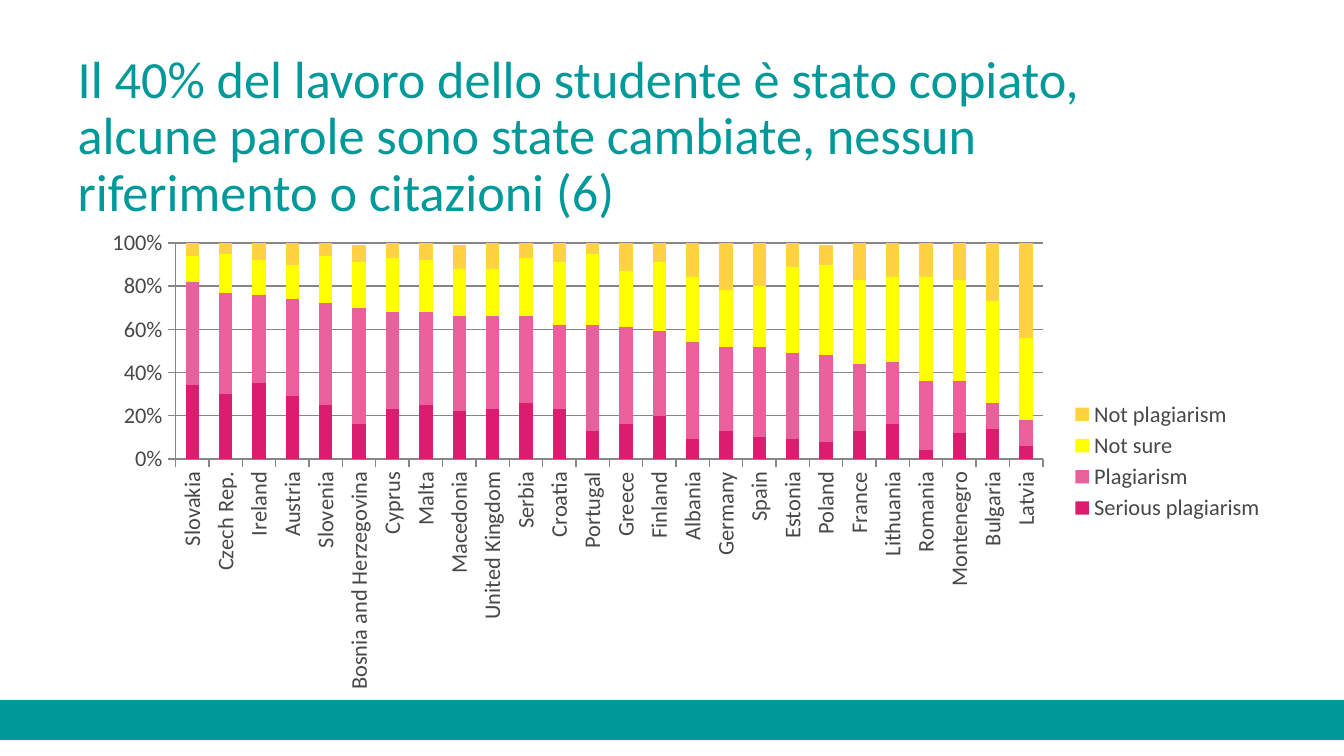
"""Build a slide with a stacked column chart of plagiarism opinions by country."""
from lxml.etree import SubElement
from pptx import Presentation
from pptx.chart.data import CategoryChartData as Data
from pptx.dml.color import RGBColor as Rgb
from pptx.enum.chart import XL_CHART_TYPE as Kind, XL_LEGEND_POSITION as Side
from pptx.enum.chart import XL_TICK_MARK as Tick
from pptx.enum.shapes import MSO_SHAPE as Shape
from pptx.enum.text import MSO_ANCHOR as Anchor
from pptx.oxml.ns import qn
from pptx.util import Cm, Pt

FONT = "Calibri"
HUES = {
    "teal": "009999",
    "text": "484749",
    "line": "868686",
    "Serious plagiarism": "DC1C6E",
    "Plagiarism": "EB5F9B",
    "Not sure": "FFFF00",
    "Not plagiarism": "FFD242",
}
TITLE = ("Il 40% del lavoro dello studente è stato copiato, alcune parole "
         "sono state cambiate, nessun riferimento o citazioni (6)")
LANDS = [
    "Slovakia", "Czech Rep.", "Ireland", "Austria", "Slovenia",
    "Bosnia and Herzegovina", "Cyprus", "Malta", "Macedonia",
    "United Kingdom", "Serbia", "Croatia", "Portugal", "Greece", "Finland",
    "Albania", "Germany", "Spain", "Estonia", "Poland", "France",
    "Lithuania", "Romania", "Montenegro", "Bulgaria", "Latvia",
]
VOTES = {
    "Serious plagiarism": [
        0.34, 0.3, 0.35, 0.29, 0.25, 0.16, 0.23, 0.25, 0.22, 0.23, 0.26, 0.23, 0.13,
        0.16, 0.2, 0.09, 0.13, 0.1, 0.09, 0.08, 0.13, 0.16, 0.04, 0.12, 0.14, 0.06],
    "Plagiarism": [
        0.48, 0.47, 0.41, 0.45, 0.47, 0.54, 0.45, 0.43, 0.44, 0.43, 0.4, 0.39, 0.49,
        0.45, 0.39, 0.45, 0.39, 0.42, 0.4, 0.4, 0.31, 0.29, 0.32, 0.24, 0.12, 0.12],
    "Not sure": [
        0.12, 0.18, 0.16, 0.16, 0.22, 0.21, 0.25, 0.24, 0.22, 0.22, 0.27, 0.29, 0.33,
        0.26, 0.32, 0.3, 0.26, 0.28, 0.4, 0.42, 0.39, 0.39, 0.48, 0.47, 0.47, 0.38],
    "Not plagiarism": [
        0.06, 0.06, 0.09, 0.1, 0.06, 0.08, 0.07, 0.09, 0.11, 0.12, 0.08, 0.09, 0.05,
        0.13, 0.09, 0.17, 0.22, 0.2, 0.11, 0.09, 0.17, 0.17, 0.16, 0.18, 0.27, 0.44],
}


def hue(name):
    """Return the named colour."""
    return Rgb.from_string(HUES[name])


def style(font, size, name):
    """Set the face, size and colour of a font."""
    font.name = FONT
    font.size = Pt(size)
    font.color.rgb = hue(name)


def add_band(slide, left, top, width, height):
    """Add a plain teal band."""
    band = slide.shapes.add_shape(Shape.RECTANGLE, left, top, width, height)
    band.shadow.inherit = False
    band.fill.solid()
    band.fill.fore_color.rgb = hue("teal")
    band.line.fill.background()


def add_title(slide, left, top, width, height):
    """Add the heading."""
    frame = slide.shapes.add_textbox(left, top, width, height).text_frame
    frame.word_wrap = True
    frame.vertical_anchor = Anchor.MIDDLE
    para = frame.paragraphs[0]
    para.line_spacing = 0.9
    run = para.add_run()
    run.text = TITLE
    style(run.font, 28, "teal")


def place(node, index, box, inner=False):
    """Give a chart part a fixed place, as fractions of the chart."""
    old = node.find(qn("c:layout"))
    if old is not None:
        node.remove(old)
    layout = SubElement(node, qn("c:layout"))
    node.insert(index, layout)
    manual = SubElement(layout, qn("c:manualLayout"))
    pairs = [("layoutTarget", "inner")] if inner else []
    pairs += [("xMode", "edge"), ("yMode", "edge"), *zip("xywh", box)]
    for tag, value in pairs:
        SubElement(manual, qn("c:" + tag)).set("val", str(value))


def style_axes(chart):
    """Set ticks, scale, grid and label direction."""
    cats, vals = chart.category_axis, chart.value_axis
    for axis in (cats, vals):
        axis.major_tick_mark = Tick.OUTSIDE
        axis.minor_tick_mark = Tick.NONE
        axis.format.line.color.rgb = hue("line")
        style(axis.tick_labels.font, 12, "text")
    cats.has_major_gridlines = False
    turn = cats._element.find(qn("c:txPr")).find(qn("a:bodyPr"))
    turn.set("rot", "-5400000")
    turn.set("vert", "horz")
    vals.minimum_scale, vals.maximum_scale = 0, 1
    vals.major_unit = 0.2
    vals.has_major_gridlines = True
    vals.major_gridlines.format.line.color.rgb = hue("line")
    vals.tick_labels.number_format = "0%"
    vals.tick_labels.number_format_is_linked = False


def add_votes(slide, left, top, width, height):
    """Add the stacked chart with its legend."""
    data = Data(number_format="0%")
    data.categories = LANDS
    for name, votes in VOTES.items():
        data.add_series(name, votes)
    chart = slide.shapes.add_chart(
        Kind.COLUMN_STACKED, left, top, width, height, data).chart
    chart.has_title = False
    style(chart.font, 12, "text")
    plot = chart.plots[0]
    plot.gap_width, plot.overlap = 150, 100
    plot.vary_by_categories = False
    for series in plot.series:
        series.format.fill.solid()
        series.format.fill.fore_color.rgb = hue(series.name)
    style_axes(chart)
    chart.has_legend = True
    chart.legend.position = Side.RIGHT
    chart.legend.include_in_layout = False
    style(chart.legend.font, 12, "text")
    place(chart.legend._element, 1, (0.82, 0.37, 0.17, 0.27))
    area = chart._chartSpace.chart.plotArea
    place(area, 0, (0.07, 0.05, 0.73, 0.45), inner=True)


def main():
    """Build and save the slide."""
    deck = Presentation()
    deck.slide_width, deck.slide_height = Cm(25.4), Cm(14.29)
    slide = deck.slides.add_slide(deck.slide_layouts[6])
    add_band(slide, Cm(0), Cm(13.23), Cm(25.4), Cm(0.76))
    add_votes(slide, Cm(1.75), Cm(4.14), Cm(22.45), Cm(9.07))
    add_title(slide, Cm(1.22), Cm(1.07), Cm(20.65), Cm(3.07))
    deck.save("out.pptx")


if __name__ == "__main__":
    main()
